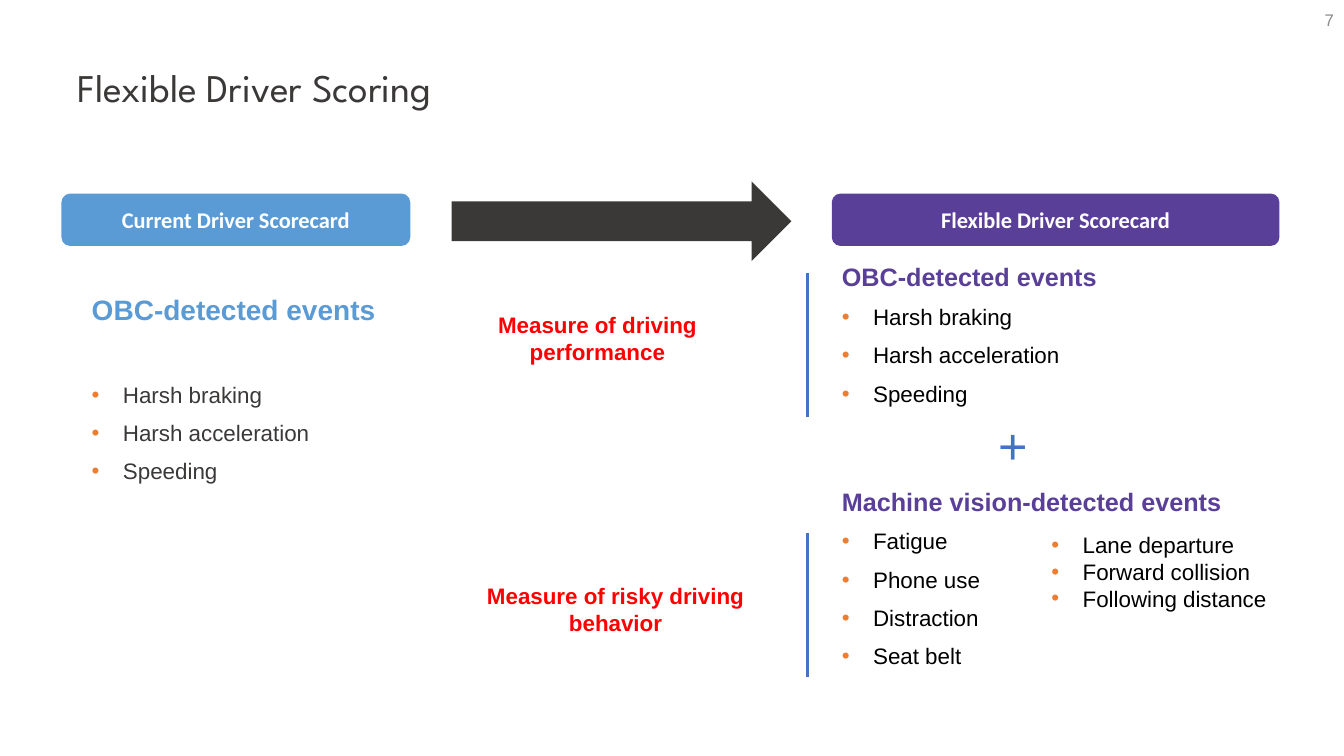
from lxml.etree import SubElement
from pptx import Presentation
from pptx.dml.color import RGBColor
from pptx.enum.shapes import MSO_CONNECTOR, MSO_SHAPE
from pptx.enum.text import MSO_ANCHOR, MSO_AUTO_SIZE, PP_ALIGN
from pptx.oxml.ns import qn
from pptx.util import Inches, Pt

COLORS = {
    "dark": "3B3838", "grey": "8C8C8C", "sky": "5B9BD5", "purple": "5A3F99",
    "blue": "4472C4", "orange": "ED7D31", "red": "FF0000",
    "black": "000000", "white": "FFFFFF",
}
OBC_EVENTS = ["Harsh braking", "Harsh acceleration", "Speeding"]
VISION_EVENTS = ["Fatigue", "Phone use", "Distraction", "Seat belt"]
ROAD_EVENTS = ["Lane departure", "Forward collision", "Following distance"]


def rgb(name):
    """Return the palette colour called name."""
    return RGBColor.from_string(COLORS[name])


def set_bullet(p, indent, bullet):
    """Set the left margin and either an orange bullet or none."""
    pPr = p._p.get_or_add_pPr()
    pPr.set("marL", str(Inches(indent)))
    pPr.set("indent", str(-Inches(indent) if bullet else 0))
    if bullet:
        clr = SubElement(pPr, qn("a:buClr"))
        SubElement(clr, qn("a:srgbClr"), val=COLORS["orange"])
        SubElement(pPr, qn("a:buFont"), typeface="Arial")
        SubElement(pPr, qn("a:buChar"), char="•")
    else:
        SubElement(pPr, qn("a:buNone"))


def add_text(tf, text, size=16, color="black", font="Arial", bold=False,
             align=PP_ALIGN.LEFT, spacing=1.0, before=0, indent=0, bullet=False):
    """Add one formatted paragraph, reusing the empty first one."""
    first = not tf.text
    p = tf.paragraphs[0] if first else tf.add_paragraph()
    set_bullet(p, indent, bullet)
    p.alignment = align
    p.line_spacing = spacing
    p.space_before = Pt(0 if first else before)
    p.space_after = Pt(0)
    r = p.add_run()
    r.text = text
    r.font.size = Pt(size)
    r.font.name = font
    r.font.bold = bold
    r.font.color.rgb = rgb(color)


def add_bullets(tf, items, first_before=None, **fmt):
    """Add items as bulleted paragraphs."""
    for i, item in enumerate(items):
        extra = {"before": first_before} if i == 0 and first_before else {}
        add_text(tf, item, indent=0.31, bullet=True, **{**fmt, **extra})


def place(sp, left, top, width, height):
    """Move a placeholder and return its top-anchored text frame."""
    sp.left, sp.top = Inches(left), Inches(top)
    sp.width, sp.height = Inches(width), Inches(height)
    tf = sp.text_frame
    tf.word_wrap = True
    tf.auto_size = MSO_AUTO_SIZE.NONE
    tf.vertical_anchor = MSO_ANCHOR.TOP
    return tf


def add_box(s, left, top, width, height):
    """Add a wrapping text box and return its text frame."""
    sp = s.shapes.add_textbox(Inches(left), Inches(top), Inches(width), Inches(height))
    sp.text_frame.word_wrap = True
    return sp.text_frame


def add_block(s, kind, left, top, width, height, fill):
    """Add a flat filled shape and return its text frame."""
    sp = s.shapes.add_shape(kind, Inches(left), Inches(top), Inches(width), Inches(height))
    sp.shadow.inherit = False
    sp.fill.solid()
    sp.fill.fore_color.rgb = rgb(fill)
    sp.line.fill.background()
    sp.text_frame.vertical_anchor = MSO_ANCHOR.MIDDLE
    return sp.text_frame


def add_rule(s, x, top, height):
    """Add a vertical blue line."""
    c = s.shapes.add_connector(MSO_CONNECTOR.STRAIGHT, Inches(x), Inches(top),
                               Inches(x), Inches(top + height))
    c.line.color.rgb = rgb("blue")
    c.line.width = Pt(2.25)
    SubElement(c._element.spPr, qn("a:effectLst"))


def main():
    """Build the driver scoring slide."""
    prs = Presentation()
    prs.slide_width, prs.slide_height = Inches(13.33), Inches(7.5)
    s = prs.slides.add_slide(prs.slide_layouts[3])
    title, current, flexible = s.placeholders

    tf = add_box(s, 10.33, 0, 3, 0.4)
    tf.vertical_anchor = MSO_ANCHOR.MIDDLE
    add_text(tf, "7", size=12, color="grey", align=PP_ALIGN.RIGHT)

    add_text(place(title, 0.67, 0.63, 7.19, 0.4), "Flexible Driver Scoring",
             size=28, color="dark", font="League Spartan", spacing=0.9)

    para = {"spacing": 0.9, "before": 10}
    tf = place(current, 0.81, 2.89, 4.12, 1.98)
    add_text(tf, "OBC-detected events", size=20, color="sky", bold=True, **para)
    add_bullets(tf, OBC_EVENTS, first_before=41, color="dark", **para)

    heading = {"size": 18, "color": "purple", "bold": True, **para}
    tf = place(flexible, 8.25, 2.58, 4.12, 4.3)
    add_text(tf, "OBC-detected events", **heading)
    add_bullets(tf, OBC_EVENTS, **para)
    add_text(tf, "+", size=36, color="blue", indent=1.55, **para)
    add_text(tf, "Machine vision-detected events", **heading)
    add_bullets(tf, VISION_EVENTS, **para)

    add_block(s, MSO_SHAPE.RIGHT_ARROW, 4.48, 1.8, 3.37, 0.79, "dark")
    for text, left, width, fill in (("Current Driver Scorecard", 0.61, 3.46, "sky"),
                                    ("Flexible Driver Scorecard", 8.25, 4.44, "purple")):
        tf = add_block(s, MSO_SHAPE.ROUNDED_RECTANGLE, left, 1.92, width, 0.52, fill)
        add_text(tf, text, color="white", font="Calibri", bold=True, align=PP_ALIGN.CENTER)

    add_bullets(add_box(s, 10.33, 5.22, 2.86, 0.91), ROAD_EVENTS)

    for text, left, top, width, rule_top in (
            ("Measure of driving performance", 4.34, 3.04, 3.17, 2.71),
            ("Measure of risky driving behavior", 4.44, 5.73, 3.33, 5.29)):
        add_text(add_box(s, left, top, width, 0.64), text, color="red", bold=True,
                 align=PP_ALIGN.CENTER)
        add_rule(s, 8.01, rule_top, 1.43)

    prs.save("out.pptx")


if __name__ == "__main__":
    main()
